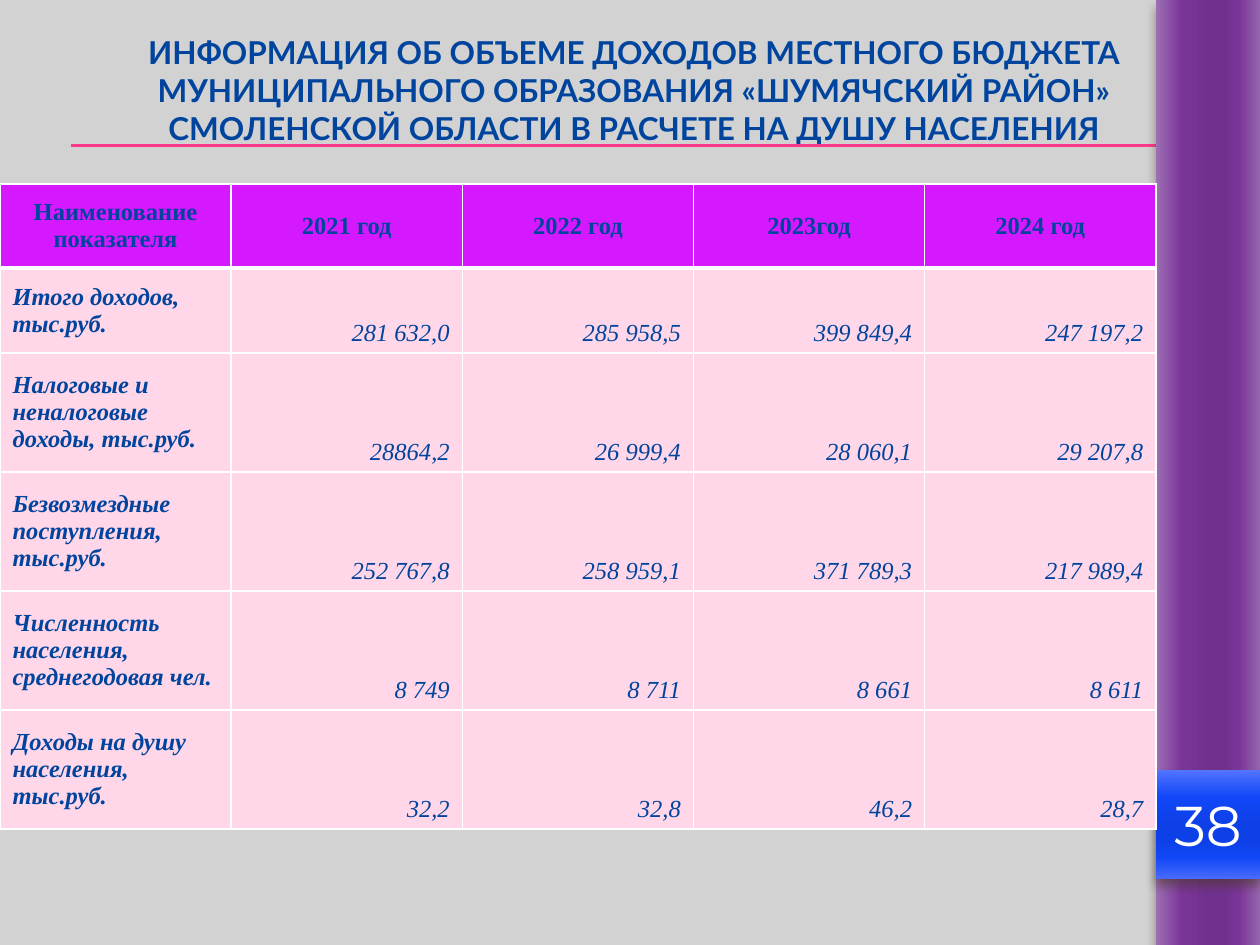
from lxml import etree
from pptx import Presentation
from pptx.dml.color import RGBColor
from pptx.enum.shapes import MSO_CONNECTOR, MSO_SHAPE
from pptx.enum.text import MSO_ANCHOR, MSO_AUTO_SIZE, PP_ALIGN
from pptx.oxml.ns import qn
from pptx.util import Emu, Pt

LEFT, CENTER, RIGHT = PP_ALIGN.LEFT, PP_ALIGN.CENTER, PP_ALIGN.RIGHT
TOP, MIDDLE, BOTTOM = MSO_ANCHOR.TOP, MSO_ANCHOR.MIDDLE, MSO_ANCHOR.BOTTOM
RECT, STRAIGHT = MSO_SHAPE.RECTANGLE, MSO_CONNECTOR.STRAIGHT

GREY = RGBColor(0xD2, 0xD2, 0xD2)
BLUE = RGBColor(0x00, 0x44, 0x9E)
PINK = RGBColor(0xFF, 0x38, 0x8C)
PALE = RGBColor(0xFF, 0xD7, 0xE8)
MAGENTA = RGBColor(0xD5, 0x19, 0xFF)
WHITE = RGBColor(0xFF, 0xFF, 0xFF)
BROWN = RGBColor(0x4E, 0x3B, 0x30)

STOPS = (0, 25, 50, 65, 80, 100)
PURPLES = [RGBColor.from_string(c) for c in
           ("9C6FB3", "7A3599", "71308E", "71308E", "7A3598", "9566AD")]
BLUES = [RGBColor.from_string(c) for c in
         ("5374FF", "1147F8", "0E40E7", "0E40E7", "1147F6", "476AFD")]

SERIF = "Times New Roman"
TITLE = ("ИНФОРМАЦИЯ ОБ ОБЪЕМЕ ДОХОДОВ МЕСТНОГО БЮДЖЕТА "
         "МУНИЦИПАЛЬНОГО ОБРАЗОВАНИЯ «ШУМЯЧСКИЙ РАЙОН» "
         "СМОЛЕНСКОЙ ОБЛАСТИ В РАСЧЕТЕ НА ДУШУ НАСЕЛЕНИЯ")
ROWS = [
    ("Наименование показателя", "2021 год", "2022 год", "2023год", "2024 год"),
    ("Итого доходов, тыс.руб.",
     "281 632,0", "285 958,5", "399 849,4", "247 197,2"),
    ("Налоговые и неналоговые доходы, тыс.руб.",
     "28864,2", "26 999,4", "28 060,1", "29 207,8"),
    ("Безвозмездные поступления, тыс.руб.",
     "252 767,8", "258 959,1", "371 789,3", "217 989,4"),
    ("Численность населения, среднегодовая чел.",
     "8 749", "8 711", "8 661", "8 611"),
    ("Доходы на душу населения, тыс.руб.", "32,2", "32,8", "46,2", "28,7"),
]
HEIGHTS = (84, 85, 119, 119, 119, 119)


def px(n):
    return Emu(round(n * 914400 / 126))


def write(frame, text, font=SERIF, size=14, color=BLUE, bold=False,
          italic=False, align=CENTER):
    para = frame.paragraphs[0]
    para.alignment = align
    run = para.add_run()
    run.text = text
    face = run.font
    face.name, face.size = font, Pt(size)
    face.bold, face.italic = bold, italic
    face.color.rgb = color


def add_color(parent, color):
    return etree.SubElement(parent, qn("a:srgbClr"), val=str(color))


def add_panel(slide, x, y, w, h, colors, angle):
    panel = slide.shapes.add_shape(RECT, px(x), px(y), px(w), px(h))
    panel.line.fill.background()

    # Gradient
    panel.fill.gradient()
    panel.fill.gradient_angle = angle
    stops = panel.element.spPr.find(".//" + qn("a:gsLst"))
    for old in list(stops):
        stops.remove(old)
    for pos, color in zip(STOPS, colors):
        add_color(etree.SubElement(stops, qn("a:gs"), pos=str(pos * 1000)),
                  color)

    # Soft shadow
    panel.shadow.inherit = False
    effects = panel.element.spPr.find(qn("a:effectLst"))
    shade = etree.SubElement(effects, qn("a:outerShdw"), blurRad=str(Pt(6)),
                             dist=str(Pt(4)), dir="5400000", rotWithShape="0")
    etree.SubElement(add_color(shade, BROWN), qn("a:alpha"), val="60000")
    return panel


def add_rule(slide, x1, x2, y):
    rule = slide.shapes.add_connector(STRAIGHT, px(x1), px(y), px(x2), px(y))
    rule.line.color.rgb = PINK
    rule.line.width = Pt(0.75)
    etree.SubElement(rule.element.spPr, qn("a:effectLst"))


def add_edges(cell, bottom):
    props = cell._tc.get_or_add_tcPr()
    for side, width in (("L", 1), ("R", 1), ("T", 1), ("B", bottom)):
        edge = etree.SubElement(props, qn("a:ln" + side), w=str(Pt(width)))
        add_color(etree.SubElement(edge, qn("a:solidFill")), WHITE)


def add_grid(slide, x, y, width):
    count = len(ROWS[0])
    grid = slide.shapes.add_table(len(ROWS), count, px(x), px(y), px(width),
                                  px(sum(HEIGHTS))).table
    for col in grid.columns:
        col.width = px(width / count)
    for r, (values, height) in enumerate(zip(ROWS, HEIGHTS)):
        grid.rows[r].height = px(height)
        head = r == 0
        for c, value in enumerate(values):
            cell = grid.cell(r, c)
            label = c == 0
            add_edges(cell, 3 if head else 1)
            if r == 1:
                cell._tc.tcPr.find(qn("a:lnT")).set("w", str(Pt(3)))
            cell.fill.solid()
            cell.fill.fore_color.rgb = MAGENTA if head else PALE
            cell.vertical_anchor = MIDDLE if head or label else BOTTOM
            align = CENTER if head else LEFT if label else RIGHT
            write(cell.text_frame, value, bold=head or label,
                  italic=not head, align=align)


def set_title(slide):
    title = slide.shapes.title
    title.left, title.top = px(123), px(27)
    title.width, title.height = px(1022), px(127)
    frame = title.text_frame
    frame.word_wrap = True
    frame.auto_size = MSO_AUTO_SIZE.NONE
    frame.vertical_anchor = TOP
    write(frame, TITLE, font="Lato", size=18, bold=True)


def main():
    deck = Presentation()
    deck.slide_width, deck.slide_height = px(1260), px(945)
    slide = deck.slides.add_slide(deck.slide_layouts[5])
    slide.background.fill.solid()
    slide.background.fill.fore_color.rgb = GREY

    # Title and the double rule under it
    set_title(slide)
    for y in (145, 146):
        add_rule(slide, 71, 1260, y)

    # Side band and page number
    add_panel(slide, 1156, 0, 104, 945, PURPLES, 0)
    badge = add_panel(slide, 1156, 770, 104, 109, BLUES, 270)
    badge.text_frame.vertical_anchor = MIDDLE
    write(badge.text_frame, "38", font="Montserrat", size=32, color=WHITE)

    # Income table
    add_grid(slide, 0, 184, 1156)
    deck.save("out.pptx")


if __name__ == "__main__":
    main()
